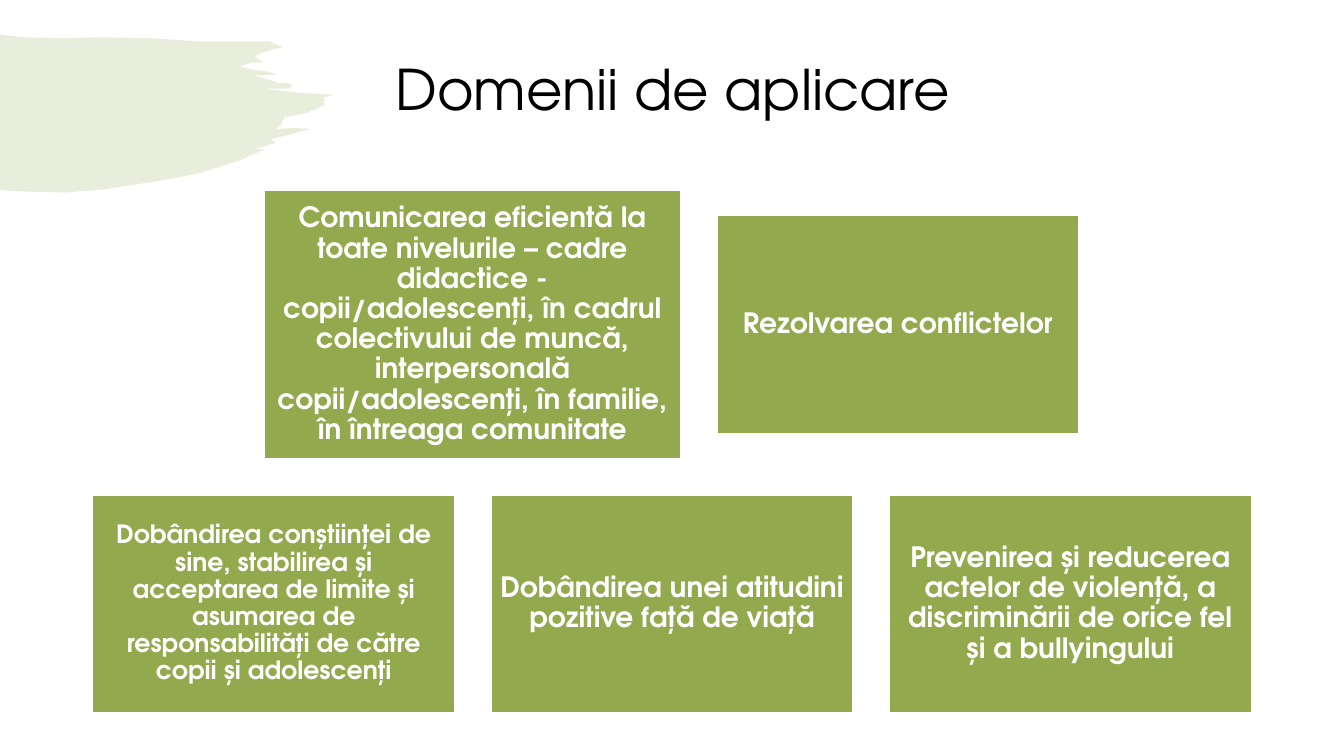
from dataclasses import dataclass

import pptx
import pptx.dml.color
import pptx.enum.shapes
import pptx.enum.text
import pptx.oxml
import pptx.oxml.ns
import pptx.shapes.autoshape
import pptx.slide
import pptx.text.text
import pptx.util

PX = 9144  # 100 px to the inch
SLIDE_W, SLIDE_H = 1333, 750
GAP = 36
FONT = "TeX Gyre Adventor"
GREEN = pptx.dml.color.RGBColor(0x93, 0xA9, 0x4E)
WHITE = pptx.dml.color.RGBColor(0xFF, 0xFF, 0xFF)
BLACK = pptx.dml.color.RGBColor(0x00, 0x00, 0x00)

BRUSH = [
    (0, 34), (6, 35), (25, 37), (66, 38), (102, 37), (151, 38), (194, 41),
    (248, 41), (267, 41), (280, 47), (271, 49), (255, 54), (253, 57), (256, 59),
    (262, 62), (249, 62), (238, 66), (246, 68), (256, 70), (266, 71), (275, 74),
    (251, 75), (263, 78), (273, 81), (276, 83), (280, 82), (288, 83), (290, 85),
    (287, 88), (284, 88), (263, 88), (296, 92), (330, 94), (321, 97), (322, 104),
    (318, 106), (307, 111), (300, 113), (283, 116), (280, 120), (278, 125),
    (274, 128), (291, 127), (308, 128), (289, 133), (269, 138), (273, 142),
    (252, 148), (263, 148), (238, 159), (197, 172), (155, 180), (102, 188),
    (65, 191), (23, 190), (7, 189), (0, 188),
]


@dataclass
class Card:
    text: str
    width: int = 359
    height: int = 216
    size: int = 20
    inset: int = 8


@dataclass
class Row:
    middle: int
    cards: list[Card]


ROWS = [
    Row(322, [
        Card("Comunicarea eficientă la toate nivelurile – cadre didactice - "
             "copii/adolescenți, în cadrul colectivului de muncă, interpersonală "
             "copii/adolescenți, în familie, în întreaga comunitate", 413, 266),
        Card("Rezolvarea conflictelor"),
    ]),
    Row(599, [
        Card("Dobândirea conștiinței de sine, stabilirea și acceptarea de limite și "
             "asumarea de responsabilități de către copii și adolescenți",
             size=18, inset=7),
        Card("Dobândirea unei atitudini pozitive față de viață"),
        Card("Prevenirea și reducerea actelor de violență, a discriminării de orice fel "
             "și a bullyingului"),
    ]),
]


def write(tf: pptx.text.text.TextFrame, text: str, size: int,
          color: pptx.dml.color.RGBColor, bold: bool = False) -> None:
    """Fill the frame with one centred paragraph."""
    frame_format = {
        "word_wrap": True,
        "auto_size": pptx.enum.text.MSO_AUTO_SIZE.NONE,
        "vertical_anchor": pptx.enum.text.MSO_ANCHOR.MIDDLE,
    }
    for name, value in frame_format.items():
        setattr(tf, name, value)
    p = tf.paragraphs[0]
    p.alignment = pptx.enum.text.PP_ALIGN.CENTER
    p.line_spacing = 0.9
    r = p.add_run()
    r.text = text
    for name, value in {"name": FONT, "size": pptx.util.Pt(size), "bold": bold}.items():
        setattr(r.font, name, value)
    r.font.color.rgb = color


def fill_green(sp: pptx.shapes.autoshape.Shape) -> None:
    sp.shadow.inherit = False
    sp.fill.solid()
    sp.fill.fore_color.rgb = GREEN


def add_brush(s: pptx.slide.Slide) -> None:
    """Draw the pale brush stroke in the top left corner."""
    builder = s.shapes.build_freeform(*BRUSH[0], scale=PX)
    builder.add_line_segments(BRUSH[1:], close=True)
    sp = builder.convert_to_shape()
    fill_green(sp)
    sp.line.fill.background()
    color = sp.fill._xPr.find(".//" + pptx.oxml.ns.qn("a:srgbClr"))
    color.append(pptx.oxml.parse_xml(
        f'<a:alpha {pptx.oxml.ns.nsdecls("a")} val="20000"/>'))


def add_title(s: pptx.slide.Slide) -> None:
    title = s.shapes.title
    box = {"left": 92, "top": 40, "width": 1150, "height": 103}
    for name, value in box.items():
        setattr(title, name, value * PX)
    write(title.text_frame, "Domenii de aplicare", 40, BLACK)


def add_card(s: pptx.slide.Slide, card: Card, left: int, middle: int) -> None:
    top = middle - card.height // 2
    sp = s.shapes.add_shape(
        pptx.enum.shapes.MSO_SHAPE.RECTANGLE,
        left * PX, top * PX, card.width * PX, card.height * PX)
    fill_green(sp)
    sp.line.color.rgb = WHITE
    sp.line.width = pptx.util.Pt(1)
    for side in ("left", "top", "right", "bottom"):
        setattr(sp.text_frame, f"margin_{side}", card.inset * PX)
    write(sp.text_frame, card.text, card.size, WHITE, bold=True)


def add_row(s: pptx.slide.Slide, row: Row) -> None:
    """Centre the row's cards on the slide with equal gaps."""
    total = sum(card.width for card in row.cards) + GAP * (len(row.cards) - 1)
    left = (SLIDE_W - total) // 2
    for card in row.cards:
        add_card(s, card, left, row.middle)
        left += card.width + GAP


def main() -> None:
    prs = pptx.Presentation()
    prs.slide_width, prs.slide_height = SLIDE_W * PX, SLIDE_H * PX
    s = prs.slides.add_slide(prs.slide_layouts[5])
    add_brush(s)
    add_title(s)
    for row in ROWS:
        add_row(s, row)
    prs.save("out.pptx")


if __name__ == "__main__":
    main()
